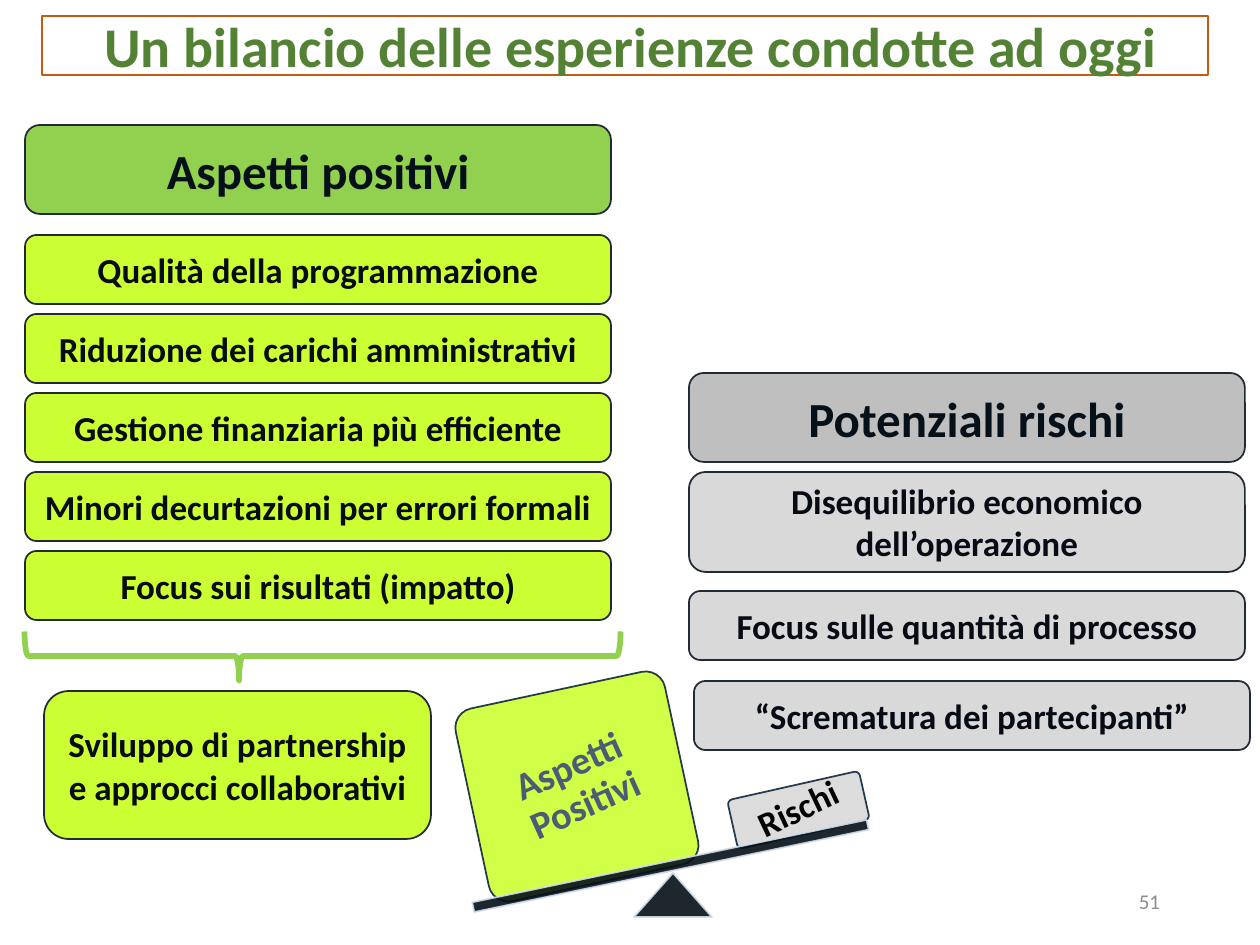
from lxml import etree
from pptx import Presentation
from pptx.dml.color import RGBColor
from pptx.enum.shapes import MSO_SHAPE as SHAPE
from pptx.enum.text import MSO_ANCHOR as ANCHOR, PP_ALIGN as ALIGN
from pptx.oxml.ns import qn
from pptx.util import Emu, Pt

PX_PER_INCH = 126
FONT = "Calibri"
DARK, BODY, OUTLINE = "061018", "060B14", "222A35"
GREEN, LIME = "92D050", "CCFF33"
GRAY, LIGHT_GRAY = "BFBFBF", "D9D9D9"
SCALE_EDGE, SCALE_LOAD_EDGE = "D2DEEF", "0F273D"


def px(value):
    return Emu(round(value * 914400 / PX_PER_INCH))


def color(hex_value):
    return RGBColor.from_string(hex_value)


def set_opacity(fill_parent, percent):
    for rgb in fill_parent.iter(qn("a:srgbClr")):
        alpha = etree.SubElement(rgb, qn("a:alpha"))
        alpha.set("val", str(percent * 1000))


def write_text(shape, text, size, hex_value, bold=True, align=ALIGN.CENTER,
               inset=13, line_spacing=None):
    frame = shape.text_frame
    frame.word_wrap = True
    frame.vertical_anchor = ANCHOR.MIDDLE
    frame.margin_left = frame.margin_right = px(inset)
    frame.margin_top = frame.margin_bottom = px(min(inset, 6))
    paragraph = frame.paragraphs[0]
    paragraph.alignment = align
    if line_spacing:
        paragraph.line_spacing = line_spacing
    run = paragraph.add_run()
    run.text = text
    run.font.name = FONT
    run.font.size = Pt(size)
    run.font.bold = bold
    run.font.color.rgb = color(hex_value)


def add_shape(slide, kind, box, fill, line, line_width=1, rotation=0):
    shape = slide.shapes.add_shape(kind, *map(px, box))
    shape.shadow.inherit = False
    shape.rotation = rotation
    if fill:
        shape.fill.solid()
        shape.fill.fore_color.rgb = color(fill)
    else:
        shape.fill.background()
    shape.line.color.rgb = color(line)
    shape.line.width = Pt(line_width)
    return shape


def add_label(slide, box, text, size, hex_value, rotation=0, **options):
    label = slide.shapes.add_textbox(*map(px, box))
    label.rotation = rotation
    write_text(label, text, size, hex_value, **options)


def add_card(slide, box, text, fill, size=20, text_color=BODY):
    card = add_shape(slide, SHAPE.ROUNDED_RECTANGLE, box, fill, OUTLINE)
    write_text(card, text, size, text_color)


def add_scale_part(slide, kind, box, fill, line, rotation=0):
    part = add_shape(slide, kind, box, fill, line, rotation=rotation)
    if kind == SHAPE.ROUNDED_RECTANGLE:
        part.adjustments[0] = 0.1
    set_opacity(part.element.spPr, 90)


def add_seesaw(slide):
    # Loads with their labels
    loads = [
        ((470, 688, 214, 197), LIME, 347.9, "Aspetti Positivi", 22, "4B5C74", 335.9),
        ((731, 785, 135, 50), LIGHT_GRAY, 347.3, "Rischi", 20, "000000", 334.7),
    ]
    for box, fill, tilt, text, size, text_color, text_tilt in loads:
        add_scale_part(slide, SHAPE.ROUNDED_RECTANGLE, box, fill, SCALE_LOAD_EDGE, tilt)
        add_label(slide, box, text, size, text_color, text_tilt,
                  inset=10, line_spacing=0.9)
    # Pivot and beam
    add_scale_part(slide, SHAPE.ISOSCELES_TRIANGLE, (634, 873, 78, 44), DARK, SCALE_EDGE)
    add_scale_part(slide, SHAPE.RECTANGLE, (469, 861, 403, 10), DARK, SCALE_EDGE, 348.2)


def add_positives(slide):
    left, width = 25, 586
    add_card(slide, (left, 125, width, 89), "Aspetti positivi", GREEN, 28, DARK)
    points = [
        "Qualità della programmazione",
        "Riduzione dei carichi amministrativi",
        "Gestione finanziaria più efficiente",
        "Minori decurtazioni per errori formali",
        "Focus sui risultati (impatto)",
    ]
    for index, text in enumerate(points):
        add_card(slide, (left, 235 + 79 * index, width, 69), text, LIME)

    # Brace leading to the overall result
    brace = add_shape(slide, SHAPE.LEFT_BRACE, (298, 358, 49, 596), None, GREEN, 3.25, 270)
    brace.adjustments[0] = 0.08
    brace.adjustments[1] = 0.36
    add_card(slide, (44, 691, 387, 148),
             "Sviluppo di partnership e approcci collaborativi", LIME)


def add_risks(slide):
    left, width = 689, 556
    add_card(slide, (left, 373, width, 89), "Potenziali rischi", GRAY, 28, DARK)
    risks = [
        (left, 472, 100, "Disequilibrio economico dell’operazione"),
        (left, 591, 69, "Focus sulle quantità di processo"),
        (left + 5, 681, 69, "“Scrematura dei partecipanti”"),
    ]
    for x, top, height, text in risks:
        add_card(slide, (x, top, width, height), text, LIGHT_GRAY)


def main():
    presentation = Presentation()
    presentation.slide_width, presentation.slide_height = px(1260), px(945)
    slide = presentation.slides.add_slide(presentation.slide_layouts[6])

    # Page number and title
    add_label(slide, (890, 876, 283, 50), "51", 12, "8C8C8C",
              bold=False, align=ALIGN.RIGHT)
    title = add_shape(slide, SHAPE.RECTANGLE, (42, 16, 1166, 59), "FFFFFF", "C55A11", 0.75)
    write_text(title, "Un bilancio delle esperienze condotte ad oggi", 32, "548235")
    title.text_frame.margin_left = px(25)

    add_seesaw(slide)
    add_positives(slide)
    add_risks(slide)
    presentation.save("out.pptx")


if __name__ == "__main__":
    main()
